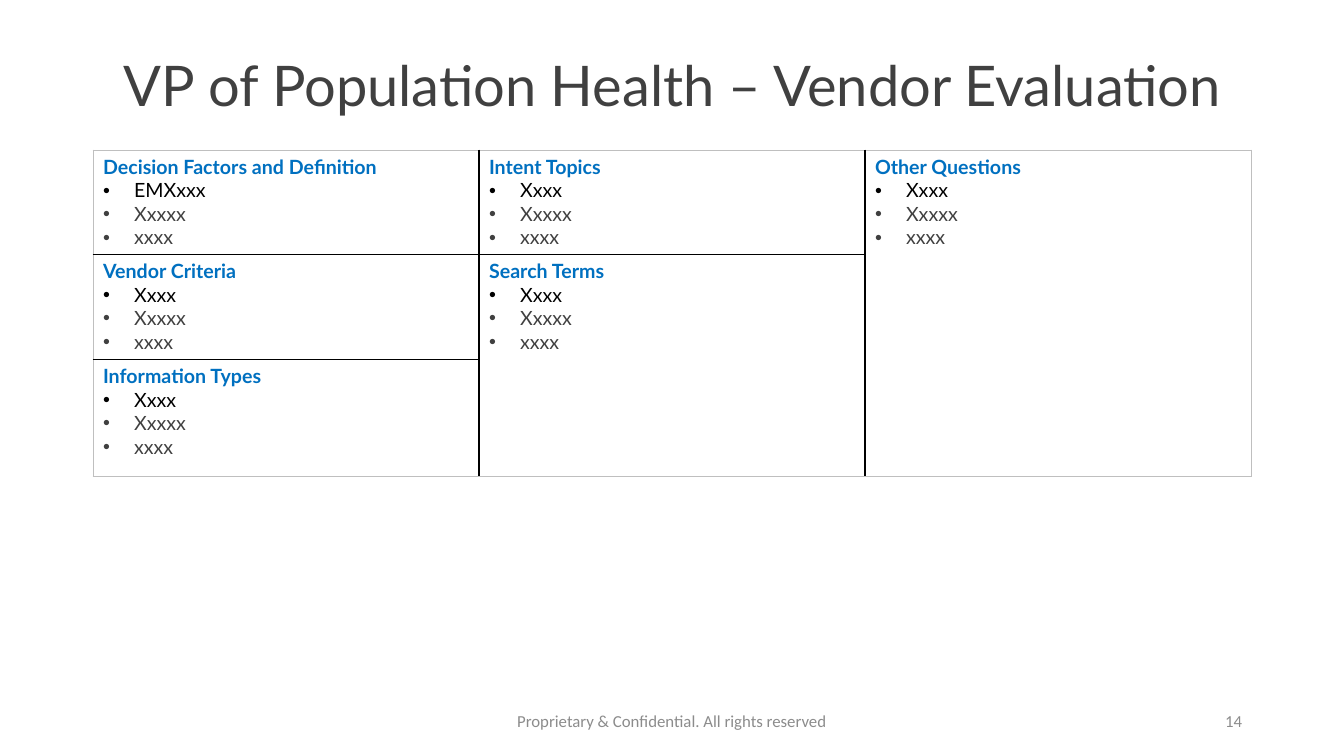
from lxml import etree
from pptx import Presentation
from pptx.dml.color import RGBColor as Rgb
from pptx.enum.text import MSO_ANCHOR as Anchor, MSO_AUTO_SIZE as Fit, PP_ALIGN as Align
from pptx.oxml.ns import qn
from pptx.util import Pt

TITLE = "VP of Population Health – Vendor Evaluation"
# (row, column, rows spanned, heading, first item)
TOPICS = [
    (0, 0, 1, "Decision Factors and Definition", "EMXxxx"),
    (0, 1, 1, "Intent Topics", "Xxxx"),
    (0, 2, 3, "Other Questions", "Xxxx"),
    (1, 0, 1, "Vendor Criteria", "Xxxx"),
    (1, 1, 2, "Search Terms", "Xxxx"),
    (2, 0, 1, "Information Types", "Xxxx"),
]
REST = ["Xxxxx", "xxxx"]
# (text, left, width, alignment)
FOOTERS = [
    ("Proprietary & Confidential. All rights reserved", 445, 454, Align.CENTER),
    ("14", 950, 302, Align.RIGHT),
]
COLORS = {"text": "404040", "head": "0070C0", "first": "000000",
          "foot": "8C8C8C", "inner": "000000", "outer": "BFBFBF"}
LEFT, TOP, COL_W = 93, 150, 386
ROW_HS = [104, 105, 117]
COLS, ROWS = 3, len(ROW_HS)
INDENT = 31


def px(n):
    return round(n * 914400 / 100.8)


def add_run(par, text, color, size, font="Lato", bold=False):
    run = par.add_run()
    run.text = text
    run.font.name, run.font.size, run.font.bold = font, Pt(size), bold
    run.font.color.rgb = Rgb.from_string(COLORS[color])


def add_bullet(par):
    props = par._p.get_or_add_pPr()
    props.set("marL", str(px(INDENT)))
    props.set("indent", str(-px(INDENT)))
    etree.SubElement(props, qn("a:buFont"), typeface="Arial")
    etree.SubElement(props, qn("a:buChar"), char="•")


def set_edges(cell, edges):
    """Draw the left, right, top and bottom edges, each a colour name or None."""
    props = cell._tc.get_or_add_tcPr()
    for i, (side, color) in enumerate(zip("LRTB", edges)):
        line = etree.Element(qn("a:ln" + side))
        if color:
            line.set("w", str(Pt(1 if color == "inner" else 0.5)))
            fill = etree.SubElement(line, qn("a:solidFill"))
            etree.SubElement(fill, qn("a:srgbClr"), val=COLORS[color])
        else:
            etree.SubElement(line, qn("a:noFill"))
        props.insert(i, line)


def fill_cell(cell, head, first):
    frame = cell.text_frame
    add_run(frame.paragraphs[0], head, "head", 14, bold=True)
    for i, item in enumerate([first] + REST):
        par = frame.add_paragraph()
        add_bullet(par)
        add_run(par, item, "text" if i else "first", 14)


def add_title(slide):
    title = slide.shapes.title
    title.left, title.top, title.width, title.height = map(px, (LEFT, 40, 1159, 96))
    frame = title.text_frame
    frame.auto_size, frame.vertical_anchor = Fit.NONE, Anchor.MIDDLE
    par = frame.paragraphs[0]
    par.alignment, par.line_spacing = Align.CENTER, 0.9
    add_run(par, TITLE, "text", 40)


def add_grid(slide):
    table = slide.shapes.add_table(ROWS, COLS, px(LEFT), px(TOP),
                                   px(COL_W * COLS), px(sum(ROW_HS))).table
    table.first_row = table.horz_banding = False
    for col in table.columns:
        col.width = px(COL_W)
    for row, height in zip(table.rows, ROW_HS):
        row.height = px(height)
    for row, col, span, head, first in TOPICS:
        if span > 1:
            table.cell(row, col).merge(table.cell(row + span - 1, col))
        fill_cell(table.cell(row, col), head, first)
        for r in range(row, row + span):
            cell = table.cell(r, col)
            cell.fill.background()
            above = "inner" if r == row else None
            below = "inner" if r == row + span - 1 else None
            set_edges(cell, ["inner" if col else "outer",
                             "inner" if col < COLS - 1 else "outer",
                             above if r else "outer",
                             below if r < ROWS - 1 and span == 1 else
                             "outer" if r == ROWS - 1 or r == row else None])


def add_footer(slide, text, left, width, align):
    frame = slide.shapes.add_textbox(px(left), px(701), px(width), px(40)).text_frame
    frame.word_wrap, frame.vertical_anchor = True, Anchor.MIDDLE
    par = frame.paragraphs[0]
    par.alignment = align
    add_run(par, text, "foot", 12, "Calibri")


def main():
    deck = Presentation()
    deck.slide_width, deck.slide_height = px(1344), px(756)
    slide = deck.slides.add_slide(deck.slide_layouts[5])
    add_title(slide)
    add_grid(slide)
    for footer in FOOTERS:
        add_footer(slide, *footer)
    deck.save("out.pptx")


if __name__ == "__main__":
    main()
